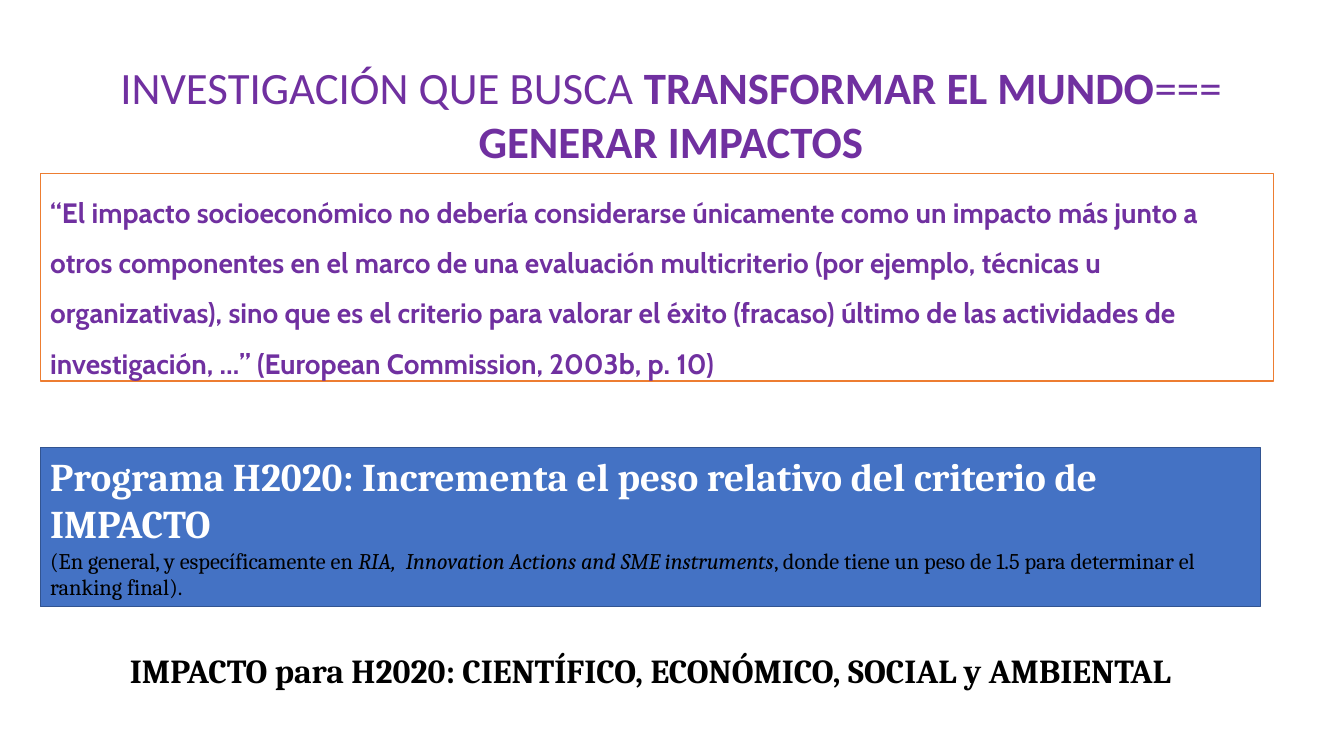
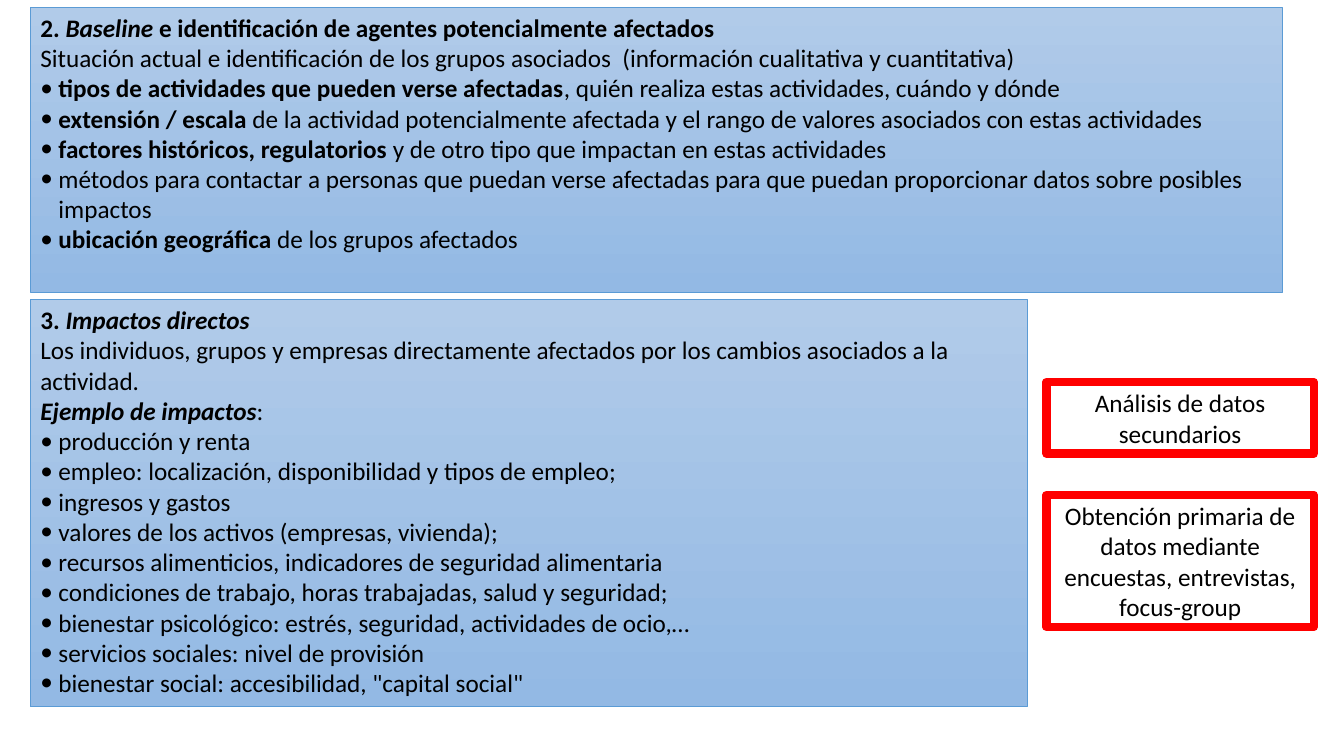
from lxml.etree import SubElement
from pptx import Presentation
from pptx.dml.color import RGBColor
from pptx.enum.shapes import MSO_SHAPE
from pptx.enum.text import MSO_ANCHOR, MSO_AUTO_SIZE, PP_ALIGN
from pptx.oxml.ns import qn
from pptx.util import Inches, Pt

COLORS = {
    "purple": "7030A0", "orange": "ED7D31", "white": "FFFFFF",
    "black": "000000", "blue": "4472C4", "dark_blue": "325491",
    "light_top": "B1CBE9", "light_bottom": "93B9E4", "sky": "5B9BD5",
    "red": "FF0000",
}

# Text formats: font values plus the colour name
TITLE = {"name": "Calibri", "size": Pt(32), "color": "purple"}
QUOTE = {"name": "Cabin", "size": Pt(20), "color": "purple"}
PROGRAM = {"name": "Cambria", "size": Pt(28), "color": "white"}
DETAIL = {"name": "Cambria", "size": Pt(16), "color": "black"}
CONCLUSION = {"name": "Cambria", "size": Pt(24), "color": "black"}
BODY = {"name": "Calibri", "size": Pt(18), "color": "black"}

BULLET_INDENT = Inches(0.18)
LAYOUT_TITLE_ONLY, LAYOUT_TWO_CONTENT = 5, 3

BASELINE_HEADING = [("2. ", "b"), ("Baseline", "bi"),
                    (" e identificación de agentes potencialmente afectados", "b")]
BASELINE_INTRO = [("Situación actual e identificación de los grupos asociados  "
                   "(información cualitativa y cuantitativa)", "")]
BASELINE_BULLETS = [
    [("tipos de actividades que pueden verse afectadas", "b"),
     (", quién realiza estas actividades, cuándo y dónde", "")],
    [("extensión / escala ", "b"),
     ("de la actividad potencialmente afectada y el rango de valores "
      "asociados con estas actividades", "")],
    [("factores históricos, regulatorios ", "b"),
     ("y de otro tipo que impactan en estas actividades", "")],
    [("métodos para contactar a personas que puedan verse afectadas para que "
      "puedan proporcionar datos sobre posibles impactos", "")],
    [("ubicación geográfica ", "b"), ("de los grupos afectados", "")],
]

IMPACT_HEADING = [("3. ", "b"), ("Impactos directos", "bi")]
IMPACT_INTRO = [("Los individuos, grupos y empresas directamente afectados por "
                 "los cambios asociados a la actividad.", "")]
IMPACT_EXAMPLES = [("Ejemplo de impactos", "bi"), (":", "")]
IMPACT_BULLETS = [[(text, "")] for text in (
    "producción y renta",
    "empleo: localización, disponibilidad y tipos de empleo;",
    "ingresos y gastos",
    "valores de los activos (empresas, vivienda);",
    "recursos alimenticios, indicadores de seguridad alimentaria",
    "condiciones de trabajo, horas trabajadas, salud y seguridad;",
    "bienestar psicológico: estrés, seguridad, actividades de ocio,…",
    "servicios sociales: nivel de provisión",
    'bienestar social: accesibilidad, "capital social"',
)]

METHODS = [
    (3.79, 0.71, "Análisis de datos secundarios"),
    (4.91, 1.31, "Obtención primaria de datos mediante encuestas, entrevistas, focus-group"),
]


def color(name):
    return RGBColor.from_string(COLORS[name])


def place(shape, left, top, width, height):
    shape.left, shape.top = Inches(left), Inches(top)
    shape.width, shape.height = Inches(width), Inches(height)


def set_line(shape, line_color, width):
    shape.line.color.rgb = color(line_color)
    shape.line.width = Pt(width)


def set_bullet(paragraph, bulleted):
    """Give the paragraph a hanging bullet, or clear an inherited one."""
    properties = paragraph._p.get_or_add_pPr()
    indent = BULLET_INDENT if bulleted else 0
    properties.set("marL", str(indent))
    properties.set("indent", str(-indent))
    if bulleted:
        SubElement(properties, qn("a:buFont")).set("typeface", "Calibri")
        SubElement(properties, qn("a:buChar")).set("char", "•")
    else:
        SubElement(properties, qn("a:buNone"))


def fill_paragraph(paragraph, runs, text_format, align=PP_ALIGN.LEFT,
                   spacing=1.0, bulleted=False):
    """Write (text, style) runs; a style holds "b" for bold and "i" for italic."""
    layout = {"alignment": align, "line_spacing": spacing,
              "space_before": Pt(0), "space_after": Pt(0)}
    for attribute, value in layout.items():
        setattr(paragraph, attribute, value)
    set_bullet(paragraph, bulleted)
    for text, style in runs:
        run = paragraph.add_run()
        run.text = text
        font_values = {"name": text_format["name"], "size": text_format["size"],
                       "bold": "b" in style, "italic": "i" in style}
        for attribute, value in font_values.items():
            setattr(run.font, attribute, value)
        run.font.color.rgb = color(text_format["color"])


def fill_text(shape, paragraphs, anchor=MSO_ANCHOR.TOP):
    """Write paragraphs given as dicts of fill_paragraph arguments."""
    frame = shape.text_frame
    frame_values = {
        "word_wrap": True, "auto_size": MSO_AUTO_SIZE.NONE, "vertical_anchor": anchor,
        "margin_left": Inches(0.1), "margin_right": Inches(0.1),
        "margin_top": Inches(0.05), "margin_bottom": Inches(0.05),
    }
    for attribute, value in frame_values.items():
        setattr(frame, attribute, value)
    for index, arguments in enumerate(paragraphs):
        paragraph = frame.add_paragraph() if index else frame.paragraphs[0]
        fill_paragraph(paragraph, **arguments)


def add_box(slide, position, line_color, line_width, paragraphs, fill_color=None,
            anchor=MSO_ANCHOR.TOP):
    box = slide.shapes.add_shape(MSO_SHAPE.RECTANGLE, *map(Inches, position))
    box.shadow.inherit = False
    if fill_color:
        box.fill.solid()
        box.fill.fore_color.rgb = color(fill_color)
    else:
        box.fill.background()
    set_line(box, line_color, line_width)
    fill_text(box, paragraphs, anchor)


def fill_panel(placeholder, position, plain, bullets):
    """Turn a body placeholder into a gradient panel: plain lines, then bullets."""
    place(placeholder, *position)
    placeholder.fill.gradient()
    placeholder.fill.gradient_angle = 270
    for stop, name in zip(placeholder.fill.gradient_stops, ("light_top", "light_bottom")):
        stop.color.rgb = color(name)
    set_line(placeholder, "sky", 0.5)
    fill_text(placeholder,
              [{"runs": runs, "text_format": BODY} for runs in plain]
              + [{"runs": runs, "text_format": BODY, "bulleted": True} for runs in bullets])


def build_impact_slide(presentation):
    slide = presentation.slides.add_slide(presentation.slide_layouts[LAYOUT_TITLE_ONLY])
    title = slide.shapes.title
    place(title, 1.04, 0.54, 11.23, 1.18)
    fill_text(title, [{
        "runs": [("INVESTIGACIÓN QUE BUSCA ", ""), ("TRANSFORMAR EL MUNDO", "b"),
                 ("=== ", ""), ("GENERAR IMPACTOS", "b")],
        "text_format": TITLE, "align": PP_ALIGN.CENTER}])

    add_box(slide, (0.4, 1.72, 12.23, 2.06), "orange", 1, [{
        "runs": [("“El impacto socioeconómico no debería considerarse únicamente como un "
                  "impacto más junto a otros componentes en el marco de una evaluación "
                  "multicriterio (por ejemplo, técnicas u organizativas), sino que es el "
                  "criterio para valorar el éxito (fracaso) último de las actividades de "
                  "investigación, …” (European Commission, 2003b, p. 10)", "b")],
        "text_format": QUOTE, "spacing": 1.5}], "white")

    add_box(slide, (0.4, 4.44, 12.1, 1.58), "dark_blue", 1, [
        {"runs": [("Programa H2020: Incrementa el peso relativo del criterio de IMPACTO", "b")],
         "text_format": PROGRAM},
        {"runs": [("(En general, y específicamente en ", ""),
                  ("RIA,  Innovation Actions and SME instruments", "i"),
                  (", donde tiene un peso de 1.5 para determinar el ranking final).", "")],
         "text_format": DETAIL}], "blue")

    conclusion = slide.shapes.add_textbox(*map(Inches, (0.5, 6.4, 11.9, 0.5)))
    fill_text(conclusion, [{
        "runs": [("IMPACTO para H2020: CIENTÍFICO, ECONÓMICO, SOCIAL y AMBIENTAL", "b")],
        "text_format": CONCLUSION, "align": PP_ALIGN.CENTER}])


def build_assessment_slide(presentation):
    slide = presentation.slides.add_slide(presentation.slide_layouts[LAYOUT_TWO_CONTENT])
    title, baseline, impacts = slide.placeholders
    title.element.getparent().remove(title.element)
    fill_panel(baseline, (0.3, 0.07, 12.42, 2.83),
               [BASELINE_HEADING, BASELINE_INTRO], BASELINE_BULLETS)
    fill_panel(impacts, (0.3, 2.97, 9.89, 4.04),
               [IMPACT_HEADING, IMPACT_INTRO, IMPACT_EXAMPLES], IMPACT_BULLETS)
    for top, height, text in METHODS:
        add_box(slide, (10.38, top, 2.65, height), "red", 6,
                [{"runs": [(text, "")], "text_format": BODY, "align": PP_ALIGN.CENTER}],
                anchor=MSO_ANCHOR.MIDDLE)


def main():
    presentation = Presentation()
    presentation.slide_width, presentation.slide_height = Inches(13.33), Inches(7.5)
    build_impact_slide(presentation)
    build_assessment_slide(presentation)
    presentation.save("out.pptx")


if __name__ == "__main__":
    main()
